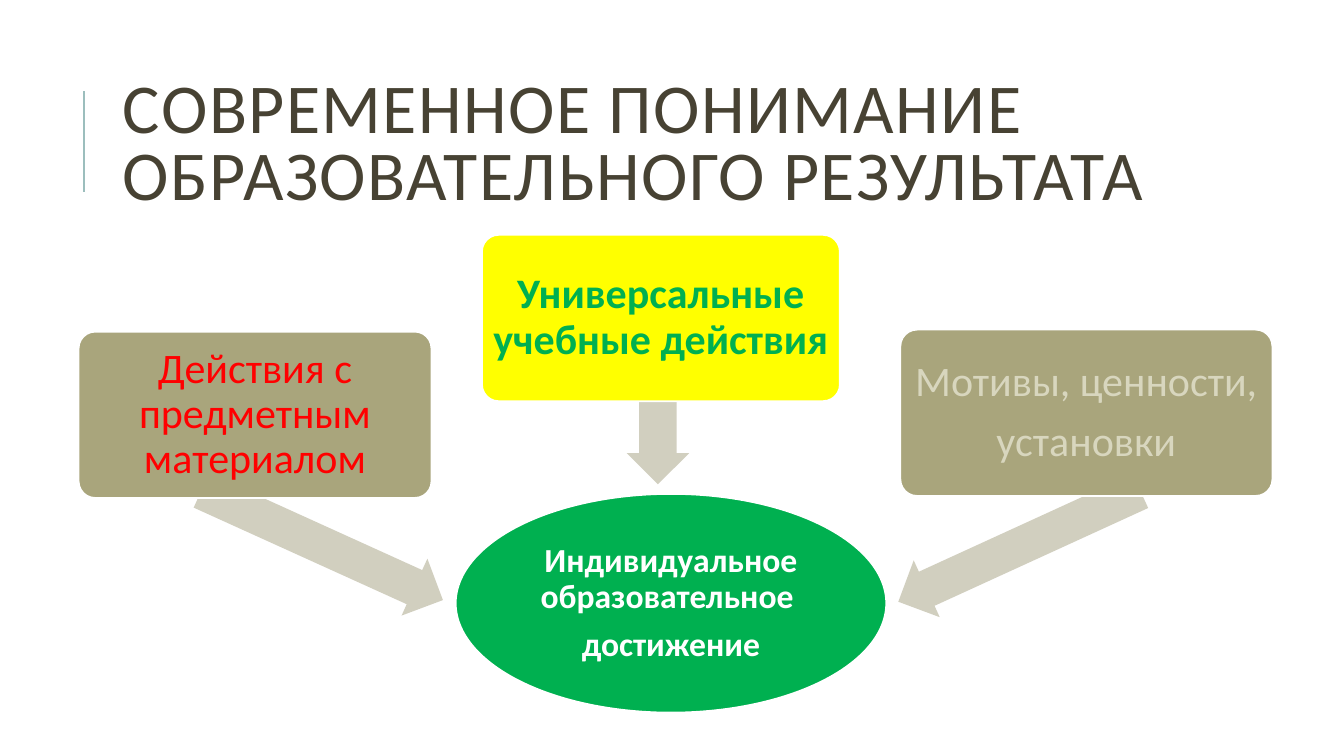
from dataclasses import dataclass

from lxml.etree import SubElement
from pptx import Presentation
from pptx.dml.color import RGBColor
from pptx.enum.shapes import MSO_CONNECTOR as Connector, MSO_SHAPE as Shape
from pptx.enum.text import MSO_ANCHOR as Anchor, PP_ALIGN as Align
from pptx.oxml.ns import qn
from pptx.util import Inches, Pt


@dataclass(frozen=True)
class Theme:
    font: str = "Calibri"
    title: str = "474233"
    accent: str = "9CBEBD"
    white: str = "FFFFFF"
    khaki: str = "A9A57C"
    pale_khaki: str = "D8D6BE"
    arrow: str = "D1CFBF"
    yellow: str = "FFFF00"
    green: str = "00B050"
    red: str = "FF0000"
    title_size: int = 50
    box_size: int = 30
    result_size: int = 24


theme = Theme()


def write_text(shape, text, size, color, bold=False, align=Align.CENTER,
               line_spacing=0.9, space_after=0.35, inset=0.06, tracking=0):
    """Fill a shape with text, one paragraph per line."""
    frame = shape.text_frame
    frame.word_wrap = True
    frame.vertical_anchor = Anchor.MIDDLE
    frame.margin_left = frame.margin_right = Inches(inset)
    frame.margin_top = frame.margin_bottom = Inches(inset)
    frame.text = text
    for paragraph in frame.paragraphs:
        paragraph.alignment = align
        paragraph.line_spacing = line_spacing
        paragraph.space_after = Pt(size * space_after)
        font = paragraph.runs[0].font
        font.name, font.size, font.bold = theme.font, Pt(size), bold
        font.color.rgb = RGBColor.from_string(color)
        if tracking:
            font._element.set("spc", str(tracking * 100))


def add_filled(kind, left, top, width, height, fill, outline=None):
    """Add a flat preset shape, with an outline if a colour is given."""
    shape = slide.shapes.add_shape(
        kind, Inches(left), Inches(top), Inches(width), Inches(height))
    shape.shadow.inherit = False
    shape.fill.solid()
    shape.fill.fore_color.rgb = RGBColor.from_string(fill)
    if outline:
        shape.line.color.rgb = RGBColor.from_string(outline)
        shape.line.width = Pt(1.25)
    else:
        shape.line.fill.background()
    return shape


presentation = Presentation()
presentation.slide_width = Inches(13.33)
presentation.slide_height = Inches(7.5)
slide = presentation.slides.add_slide(presentation.slide_layouts[6])

# Title with its side rule
rule = slide.shapes.add_connector(
    Connector.STRAIGHT, Inches(0.83), Inches(1.9), Inches(0.83), Inches(0.9))
rule.line.color.rgb = RGBColor.from_string(theme.accent)
rule.line.width = Pt(1.5)
SubElement(rule._element.spPr, qn("a:effectLst"))

title = slide.shapes.add_textbox(
    Inches(1.12), Inches(0.64), Inches(10.63), Inches(1.64))
write_text(title, "СОВРЕМЕННОЕ ПОНИМАНИЕ ОБРАЗОВАТЕЛЬНОГО РЕЗУЛЬТАТА",
           theme.title_size, theme.title, align=Align.LEFT,
           line_spacing=0.8, space_after=0, inset=0.1, tracking=1)

# Result in the centre
result = add_filled(Shape.OVAL, 4.52, 4.9, 4.27, 2.17, theme.green, theme.white)
write_text(result, "Индивидуальное образовательное \nдостижение",
           theme.result_size, theme.white, bold=True, inset=0.02)

# Three components, each over the tail of its arrow to the result:
# text, box (left, top, width), fill, text colour, bold,
# arrow (left, top, width), rotation
components = [
    ("Действия с предметным материалом", (0.78, 3.29, 3.5),
     theme.khaki, theme.red, False, (1.88, 5.1, 2.63), 204.4),
    ("Универсальные учебные действия", (4.78, 2.33, 3.55),
     theme.yellow, theme.green, True, (5.7, 3.67, 1.65), 270),
    ("Мотивы, ценности,\nустановки", (8.93, 3.27, 3.69),
     theme.khaki, theme.pale_khaki, False, (8.79, 5.11, 2.64), 335.4),
]
for text, box_place, fill, color, bold, arrow_place, rotation in components:
    arrow = add_filled(Shape.LEFT_ARROW, *arrow_place, 0.62, theme.arrow)
    arrow.adjustments[0] = 0.6
    arrow.adjustments[1] = 0.5
    arrow.rotation = rotation

    box = add_filled(Shape.ROUNDED_RECTANGLE, *box_place, 1.65, fill, theme.white)
    box.adjustments[0] = 0.1
    write_text(box, text, theme.box_size, color, bold=bold)

presentation.save("out.pptx")
